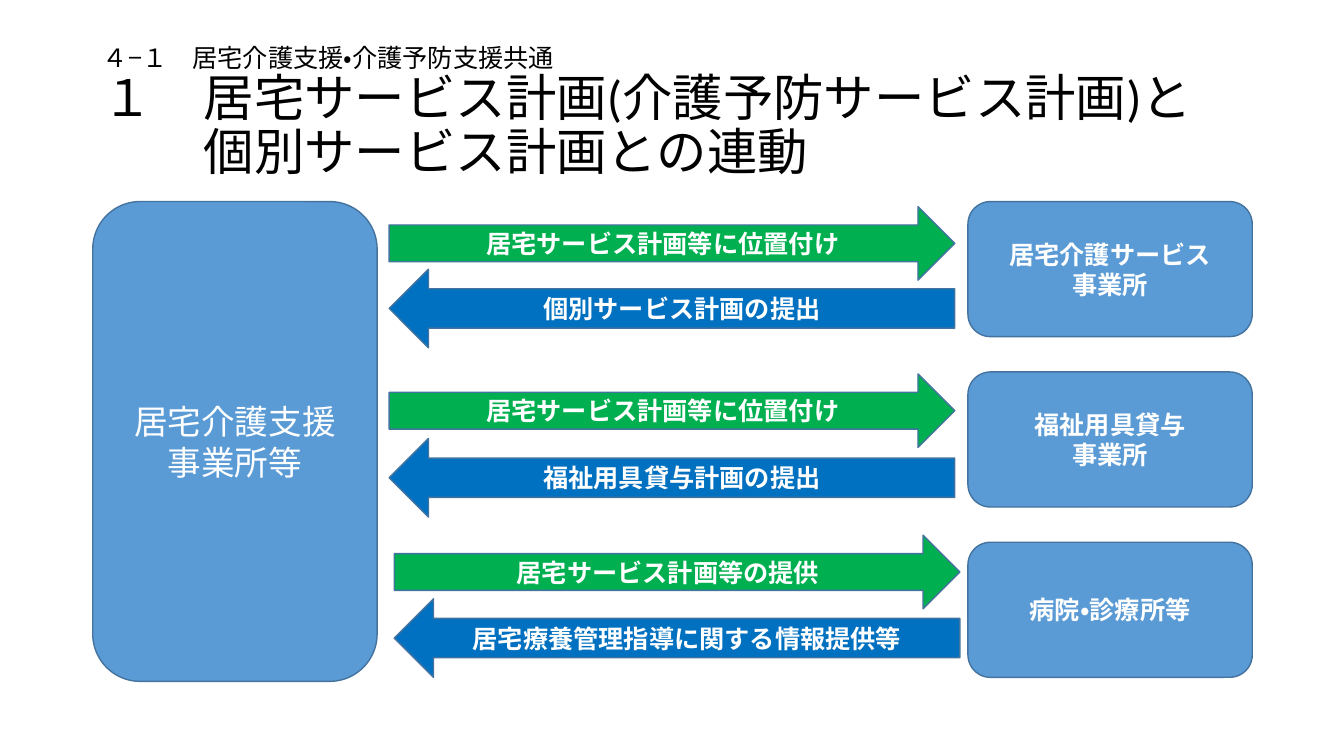
"""Builds a slide on how care plans link to individual service plans."""
from dataclasses import dataclass

from pptx import Presentation
from pptx.dml.color import RGBColor
from pptx.enum.lang import MSO_LANGUAGE_ID
from pptx.enum.shapes import MSO_SHAPE
from pptx.enum.text import MSO_ANCHOR, MSO_AUTO_SIZE, PP_ALIGN
from pptx.slide import Slide
from pptx.text.text import TextFrame
from pptx.util import Inches, Pt

ROUNDED = MSO_SHAPE.ROUNDED_RECTANGLE
RIGHT_ARROW = MSO_SHAPE.RIGHT_ARROW
LEFT_ARROW = MSO_SHAPE.LEFT_ARROW
MIDDLE = MSO_ANCHOR.MIDDLE
NO_AUTOFIT = MSO_AUTO_SIZE.NONE
LEFT = PP_ALIGN.LEFT
CENTER = PP_ALIGN.CENTER
JAPANESE = MSO_LANGUAGE_ID.JAPANESE

FONT = "Calibri"
COLORS = {
    "title": "000000",
    "label": "FFFFFF",
    "office": "5B9BD5",
    "outline": "43739E",
    "request": "00B050",
    "reply": "0070C0",
}
TITLE_SIZES = (18, 36, 36)
TITLE_TEXT = "４−１　居宅介護支援・介護予防支援共通\n１　居宅サービス計画(介護予防サービス計画)と\n個別サービス計画との連動"
OFFICE_WIDTH, OFFICE_HEIGHT = 2.82, 1.34
OFFICE_TOP, OFFICE_PITCH = 2.0, 1.69
MANAGER_LEFT, PROVIDER_LEFT = 0.92, 9.6
ARROW_WIDTH, REQUEST_HEIGHT, REPLY_HEIGHT = 5.61, 0.73, 0.78


@dataclass(frozen=True)
class Exchange:
    """A provider and the arrows between it and the care manager."""

    provider: str
    request: str
    reply: str
    arrow_left: float
    request_top: float
    reply_top: float


@dataclass(frozen=True)
class Block:
    """A filled preset shape with a centred label."""

    kind: MSO_SHAPE
    left: float
    top: float
    width: float
    height: float
    fill: str
    label: str
    size: int = 18
    bold: bool = True


EXCHANGES = (
    Exchange("居宅介護サービス\n事業所", "居宅サービス計画等に位置付け", "個別サービス計画の提出", 3.86, 2.05, 2.67),
    Exchange("福祉用具貸与\n事業所", "居宅サービス計画等に位置付け", "福祉用具貸与計画の提出", 3.86, 3.71, 4.35),
    Exchange("病院・診療所等", "居宅サービス計画等の提供", "居宅療養管理指導に関する情報提供等", 3.91, 5.31, 5.94),
)


def format_text(frame: TextFrame, sizes: tuple[int, ...], color: str, align: PP_ALIGN, bold: bool) -> None:
    """Format each paragraph with its own size."""
    frame.word_wrap = True
    frame.vertical_anchor = MIDDLE
    for para, size in zip(frame.paragraphs, sizes):
        para.alignment = align
        for span in para.runs:
            span.font.name = FONT
            span.font.size = Pt(size)
            span.font.bold = bold
            span.font.language_id = JAPANESE
            span.font.color.rgb = RGBColor.from_string(COLORS[color])


def add_title(page: Slide) -> None:
    """Fill the title placeholder, indenting its last line."""
    title = page.shapes.title
    title.left, title.top = Inches(0.92), Inches(0.4)
    title.width, title.height = Inches(11.5), Inches(1.45)
    frame = title.text_frame
    frame.text = TITLE_TEXT
    frame.auto_size = NO_AUTOFIT
    format_text(frame, TITLE_SIZES, "title", LEFT, False)
    for para in frame.paragraphs:
        para.line_spacing = 0.9
    frame.paragraphs[-1]._p.get_or_add_pPr().set("marL", str(Inches(1)))


def add_block(page: Slide, block: Block) -> None:
    """Draw one block."""
    box = page.shapes.add_shape(
        block.kind, Inches(block.left), Inches(block.top), Inches(block.width), Inches(block.height)
    )
    box.shadow.inherit = False
    box.fill.solid()
    box.fill.fore_color.rgb = RGBColor.from_string(COLORS[block.fill])
    box.line.color.rgb = RGBColor.from_string(COLORS["outline"])
    box.line.width = Pt(1)
    frame = box.text_frame
    frame.text = block.label
    format_text(frame, (block.size,) * len(frame.paragraphs), "label", CENTER, block.bold)


def add_exchange(page: Slide, exchange: Exchange, top: float) -> None:
    """Draw a provider with its request and reply arrows."""
    left = exchange.arrow_left
    add_block(page, Block(ROUNDED, PROVIDER_LEFT, top, OFFICE_WIDTH, OFFICE_HEIGHT, "office", exchange.provider))
    add_block(page, Block(RIGHT_ARROW, left, exchange.request_top, ARROW_WIDTH, REQUEST_HEIGHT, "request", exchange.request))
    add_block(page, Block(LEFT_ARROW, left, exchange.reply_top, ARROW_WIDTH, REPLY_HEIGHT, "reply", exchange.reply))


def main() -> None:
    """Build and save the deck."""
    deck = Presentation()
    deck.slide_width, deck.slide_height = Inches(13.33), Inches(7.5)
    page = deck.slides.add_slide(deck.slide_layouts.get_by_name("Title Only"))
    add_title(page)
    add_block(page, Block(ROUNDED, MANAGER_LEFT, OFFICE_TOP, OFFICE_WIDTH, 4.76, "office", "居宅介護支援\n事業所等", 24, False))
    for row, exchange in enumerate(EXCHANGES):
        add_exchange(page, exchange, OFFICE_TOP + row * OFFICE_PITCH)
    deck.save("out.pptx")


if __name__ == "__main__":
    main()
